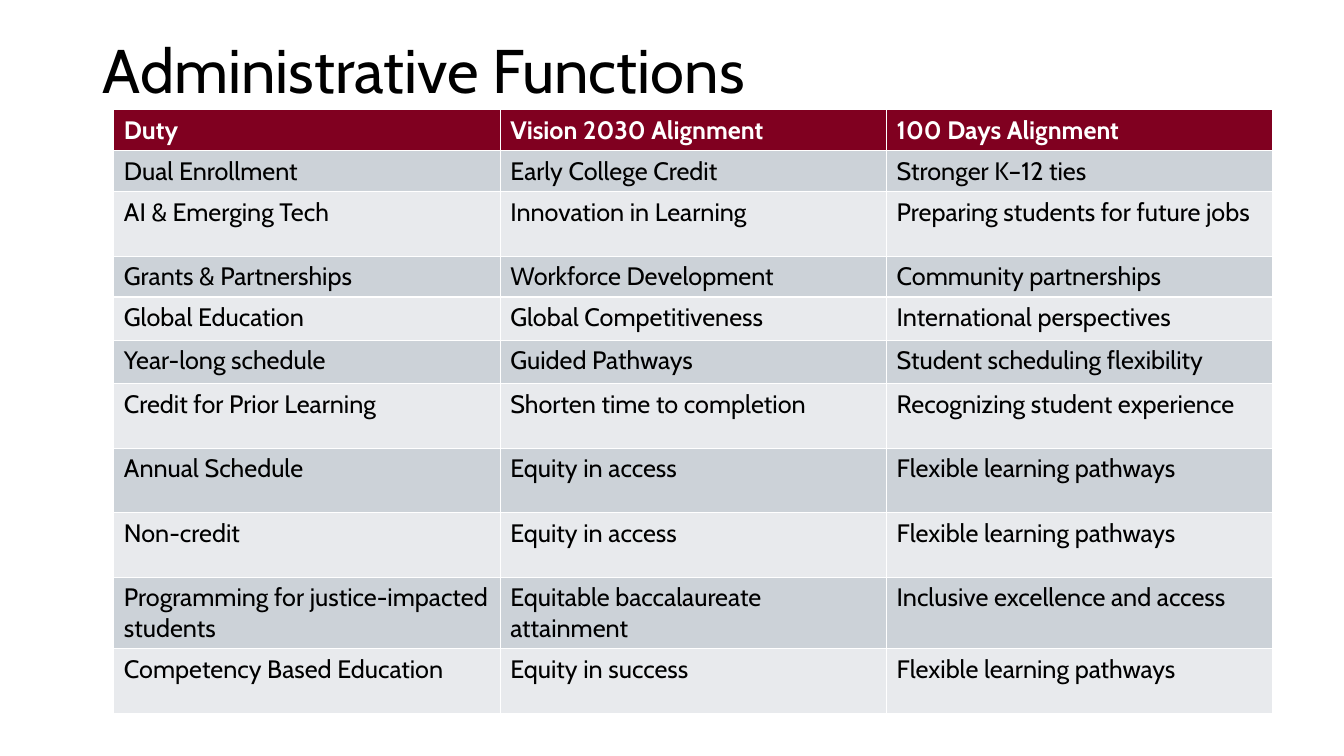
"""Build the Administrative Functions slide with its alignment table."""
import pptx
import pptx.dml.color
import pptx.enum.text
import pptx.util

SLIDE_WIDTH = pptx.util.Inches(13.333)
SLIDE_HEIGHT = pptx.util.Inches(7.5)
FONT = "Cabin"
HEADER_FILL = "800020"
BAND_FILLS = ["E8EAED", "CCD2D8"]
ROWS = [
    (0.37, "Duty", "Vision 2030 Alignment", "100 Days Alignment"),
    (0.37, "Dual Enrollment", "Early College Credit", "Stronger K–12 ties"),
    (0.64, "AI & Emerging Tech", "Innovation in Learning", "Preparing students for future jobs"),
    (0.37, "Grants & Partnerships", "Workforce Development", "Community partnerships"),
    (0.43, "Global Education", "Global Competitiveness", "International perspectives"),
    (0.43, "Year-long schedule", "Guided Pathways", "Student scheduling flexibility"),
    (0.64, "Credit for Prior Learning", "Shorten time to completion", "Recognizing student experience"),
    (0.64, "Annual Schedule", "Equity in access", "Flexible learning pathways"),
    (0.64, "Non-credit", "Equity in access", "Flexible learning pathways"),
    (0.64, "Programming for justice-impacted students", "Equitable baccalaureate attainment",
     "Inclusive excellence and access"),
    (0.64, "Competency Based Education", "Equity in success", "Flexible learning pathways"),
]


def color(value):
    return pptx.dml.color.RGBColor.from_string(value)


def format_paragraph(paragraph, size, text_color, bold=False):
    paragraph.alignment = pptx.enum.text.PP_ALIGN.LEFT
    paragraph.font.name = FONT
    paragraph.font.size = pptx.util.Pt(size)
    paragraph.font.bold = bold
    paragraph.font.color.rgb = color(text_color)


presentation = pptx.Presentation()
presentation.slide_width = SLIDE_WIDTH
presentation.slide_height = SLIDE_HEIGHT
slide = presentation.slides.add_slide(presentation.slide_layouts[5])

title = slide.shapes.title
title.left, title.top = pptx.util.Inches(0.92), 0
title.width, title.height = pptx.util.Inches(11.5), pptx.util.Inches(1.45)
title.text_frame.text = "Administrative Functions"
title.text_frame.vertical_anchor = pptx.enum.text.MSO_ANCHOR.MIDDLE
title.text_frame.paragraphs[0].line_spacing = 0.9
format_paragraph(title.text_frame.paragraphs[0], 44, "000000")

table_height = sum(row[0] for row in ROWS)
table = slide.shapes.add_table(
    len(ROWS), 3, pptx.util.Inches(1.13), pptx.util.Inches(1.09),
    pptx.util.Inches(11.5), pptx.util.Inches(table_height)).table

for row_index, (height, *texts) in enumerate(ROWS):
    is_header = row_index == 0
    table.rows[row_index].height = pptx.util.Inches(height)
    for column_index, text in enumerate(texts):
        cell = table.cell(row_index, column_index)
        cell.text = text
        cell.fill.solid()
        cell.fill.fore_color.rgb = color(HEADER_FILL if is_header else BAND_FILLS[row_index % 2])
        format_paragraph(cell.text_frame.paragraphs[0], 18,
                         "FFFFFF" if is_header else "000000", is_header)

presentation.save("out.pptx")
